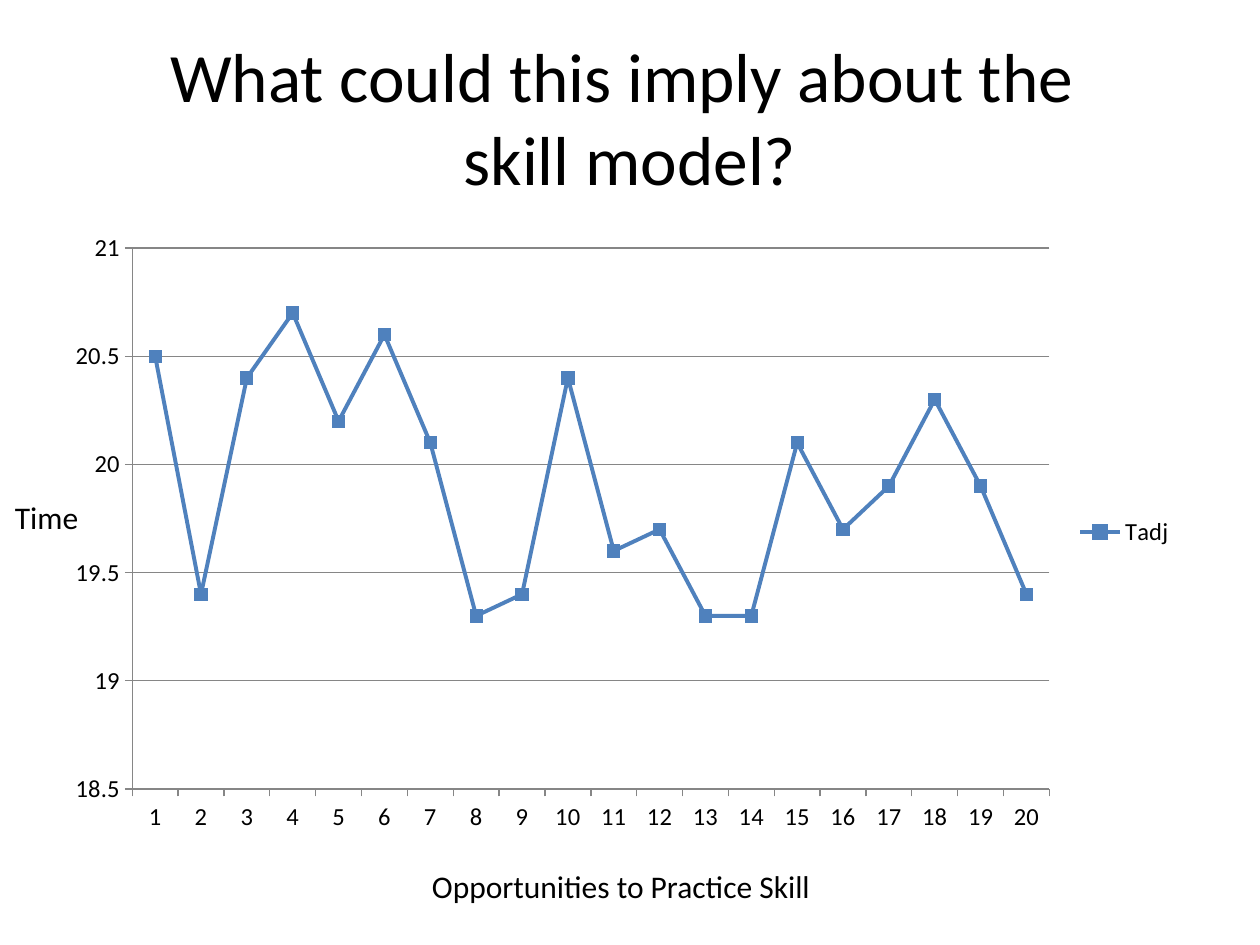
from pptx import Presentation
from pptx.chart.data import CategoryChartData
from pptx.dml.color import RGBColor
from pptx.enum.chart import XL_CHART_TYPE, XL_LEGEND_POSITION, XL_MARKER_STYLE, XL_TICK_MARK
from pptx.enum.text import MSO_ANCHOR, PP_ALIGN
from pptx.util import Inches, Pt

WIDTH, HEIGHT = 10, 7.5
FONT = "Calibri"
BLACK, GREY, BLUE = "000000", "868686", "4F81BD"
TIMES = [20.5, 19.4, 20.4, 20.7, 20.2, 20.6, 20.1, 19.3, 19.4, 20.4,
         19.6, 19.7, 19.3, 19.3, 20.1, 19.7, 19.9, 20.3, 19.9, 19.4]


def color(value):
    return RGBColor.from_string(value)


def style_font(font, size):
    font.name = FONT
    font.size = Pt(size)
    font.color.rgb = color(BLACK)


def style_line(line, value, width):
    line.color.rgb = color(value)
    line.width = Pt(width)


def add_text(slide, box, text, size=18, align=PP_ALIGN.LEFT, anchor=MSO_ANCHOR.TOP):
    shape = slide.shapes.add_textbox(*map(Inches, box))
    frame = shape.text_frame
    frame.word_wrap = True
    frame.vertical_anchor = anchor
    paragraph = frame.paragraphs[0]
    paragraph.alignment = align
    for index, line in enumerate(text.split("\n")):
        if index:
            paragraph.add_line_break()
        run = paragraph.add_run()
        run.text = line
        style_font(run.font, size)


def add_time_chart(slide, box):
    data = CategoryChartData()
    data.categories = [str(number) for number in range(1, len(TIMES) + 1)]
    data.add_series("Tadj", TIMES)
    chart = slide.shapes.add_chart(
        XL_CHART_TYPE.LINE_MARKERS, *map(Inches, box), data).chart
    style_font(chart.font, 14)
    chart.has_title = False
    chart.has_legend = True
    chart.legend.position = XL_LEGEND_POSITION.RIGHT
    chart.legend.include_in_layout = False
    chart.plots[0].vary_by_categories = False

    # Axes and gridlines
    for axis in (chart.category_axis, chart.value_axis):
        axis.major_tick_mark = XL_TICK_MARK.OUTSIDE
        axis.minor_tick_mark = XL_TICK_MARK.NONE
        style_line(axis.format.line, GREY, 0.75)
    value_axis = chart.value_axis
    value_axis.minimum_scale, value_axis.maximum_scale = 18.5, 21
    value_axis.major_unit = 0.5
    value_axis.has_major_gridlines = True
    style_line(value_axis.major_gridlines.format.line, GREY, 0.75)

    # Line with square markers
    series = chart.plots[0].series[0]
    series.smooth = False
    style_line(series.format.line, BLUE, 2.25)
    marker = series.marker
    marker.style = XL_MARKER_STYLE.SQUARE
    marker.size = 7
    marker.format.fill.solid()
    marker.format.fill.fore_color.rgb = color(BLUE)
    style_line(marker.format.line, BLUE, 0.75)


def add_chart_region(slide, box):
    left, top, width, height = box
    add_time_chart(slide, box)
    # Axis captions, beside and below the chart
    add_text(slide, (left - 0.4, top + 2.15, 1, 0.4), "Time")
    add_text(slide, (left + 2.91, top + height + 0.13, 5.42, 0.4),
             "Opportunities to Practice Skill")


def main():
    presentation = Presentation()
    presentation.slide_width, presentation.slide_height = Inches(WIDTH), Inches(HEIGHT)
    slide = presentation.slides.add_slide(presentation.slide_layouts[6])
    add_text(slide, (WIDTH * 0.05, HEIGHT * 0.04, WIDTH * 0.9, 1.25),
             "What could this imply about the \nskill model?",
             size=39.6, align=PP_ALIGN.CENTER, anchor=MSO_ANCHOR.MIDDLE)
    add_chart_region(slide, (0.42, 1.75, WIDTH * 0.9, HEIGHT * 0.66))
    presentation.save("out.pptx")


if __name__ == "__main__":
    main()
